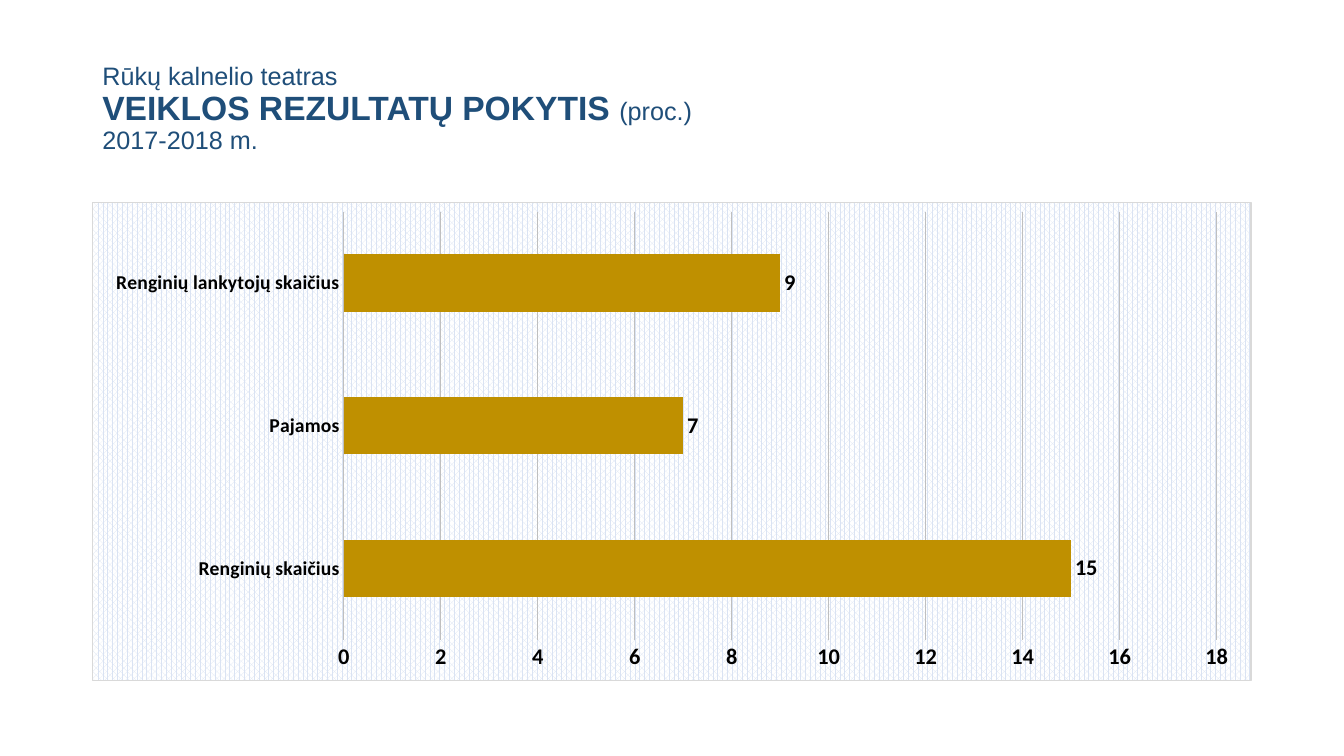
from lxml import etree
from pptx import Presentation
from pptx import util as u
from pptx.chart.data import CategoryChartData
from pptx.dml.color import RGBColor
from pptx.enum import chart as ch, text
from pptx.oxml import parse_xml
from pptx.oxml.ns import qn

NAVY = RGBColor(0x1F, 0x4E, 0x79)
GOLD = RGBColor(0xBF, 0x90, 0x00)
GRID = RGBColor(0xBF, 0xBF, 0xBF)
BORDER = RGBColor(0xD9, 0xD9, 0xD9)
PALE = RGBColor(0xDA, 0xE3, 0xF3)
WHITE = RGBColor(0xFF, 0xFF, 0xFF)
BLACK = RGBColor(0, 0, 0)

TITLE_LINES = [
    [("Rūkų kalnelio teatras", 18, False)],
    [("VEIKLOS REZULTATŲ POKYTIS ", 24, True), ("(proc.)", 18, False)],
    [("2017-2018 m.", 18, False)],
]
RESULTS = {"Renginių skaičius": 15, "Pajamos": 7, "Renginių lankytojų skaičius": 9}


def set_font(font, name, size, bold, color):
    for key, value in {"name": name, "size": u.Pt(size), "bold": bold}.items():
        setattr(font, key, value)
    font.color.rgb = color


def add_title(s, x, y, w, h):
    tf = s.shapes.add_textbox(x, y, w, h).text_frame
    tf.word_wrap = True
    tf.vertical_anchor = text.MSO_ANCHOR.MIDDLE
    p = tf.paragraphs[0]
    p.line_spacing = 0.9
    for i, line in enumerate(TITLE_LINES):
        if i:
            p.add_line_break()
        for words, size, bold in line:
            r = p.add_run()
            r.text = words
            set_font(r.font, "Arial", size, bold, NAVY)


def fill_chart_area(chart):
    sp_pr = parse_xml(
        '<c:spPr xmlns:c="http://schemas.openxmlformats.org/drawingml/2006/chart"'
        ' xmlns:a="http://schemas.openxmlformats.org/drawingml/2006/main">'
        f'<a:pattFill prst="pct70"><a:fgClr><a:srgbClr val="{PALE}"/></a:fgClr>'
        f'<a:bgClr><a:srgbClr val="{WHITE}"/></a:bgClr></a:pattFill>'
        f'<a:ln w="{u.Pt(0.75)}"><a:solidFill><a:srgbClr val="{BORDER}"/>'
        '</a:solidFill></a:ln></c:spPr>')
    space = chart.element
    space.find(qn("c:chart")).addnext(sp_pr)
    rounded = space.find(qn("c:roundedCorners"))
    if rounded is None:
        rounded = etree.Element(qn("c:roundedCorners"))
        space.find(qn("c:chart")).addprevious(rounded)
    rounded.set("val", "0")


def add_results_chart(s, x, y, w, h):
    data = CategoryChartData(number_format="0")
    data.categories = list(RESULTS)
    data.add_series("Series 1", list(RESULTS.values()))
    chart = s.shapes.add_chart(ch.XL_CHART_TYPE.BAR_CLUSTERED, x, y, w, h, data).chart
    chart.has_legend = chart.has_title = False
    set_font(chart.font, "Calibri", 10, False, BLACK)
    fill_chart_area(chart)

    for axis, size in ((chart.category_axis, 14), (chart.value_axis, 16)):
        axis.major_tick_mark = axis.minor_tick_mark = ch.XL_TICK_MARK.NONE
        axis.format.line.fill.background()
        set_font(axis.tick_labels.font, "Calibri", size, True, BLACK)
    chart.category_axis.has_major_gridlines = False

    scale = chart.value_axis
    for key, value in {"minimum_scale": 0, "maximum_scale": 18, "major_unit": 2,
                       "has_major_gridlines": True}.items():
        setattr(scale, key, value)
    scale.tick_labels.number_format = "0"
    scale.tick_labels.number_format_is_linked = False
    line = scale.major_gridlines.format.line
    line.width = u.Pt(0.75)
    line.color.rgb = GRID

    plot = chart.plots[0]
    plot.gap_width = 150
    plot.vary_by_categories = False
    series = plot.series[0]
    series.format.fill.solid()
    series.format.fill.fore_color.rgb = GOLD
    labels = series.data_labels
    for key, value in {"show_value": True, "number_format": "0",
                       "number_format_is_linked": False,
                       "position": ch.XL_LABEL_POSITION.OUTSIDE_END}.items():
        setattr(labels, key, value)
    set_font(labels.font, "Calibri", 16, True, BLACK)


def main():
    prs = Presentation()
    prs.slide_width, prs.slide_height = u.Cm(33.87), u.Cm(19.05)
    s = prs.slides.add_slide(prs.slide_layouts[6])
    left, width = u.Cm(2.33), u.Cm(29.21)
    add_title(s, left, u.Cm(1.02), width, u.Cm(3.48))
    add_results_chart(s, left, u.Cm(5.08), width, u.Cm(12.09))
    prs.save("out.pptx")


if __name__ == "__main__":
    main()
